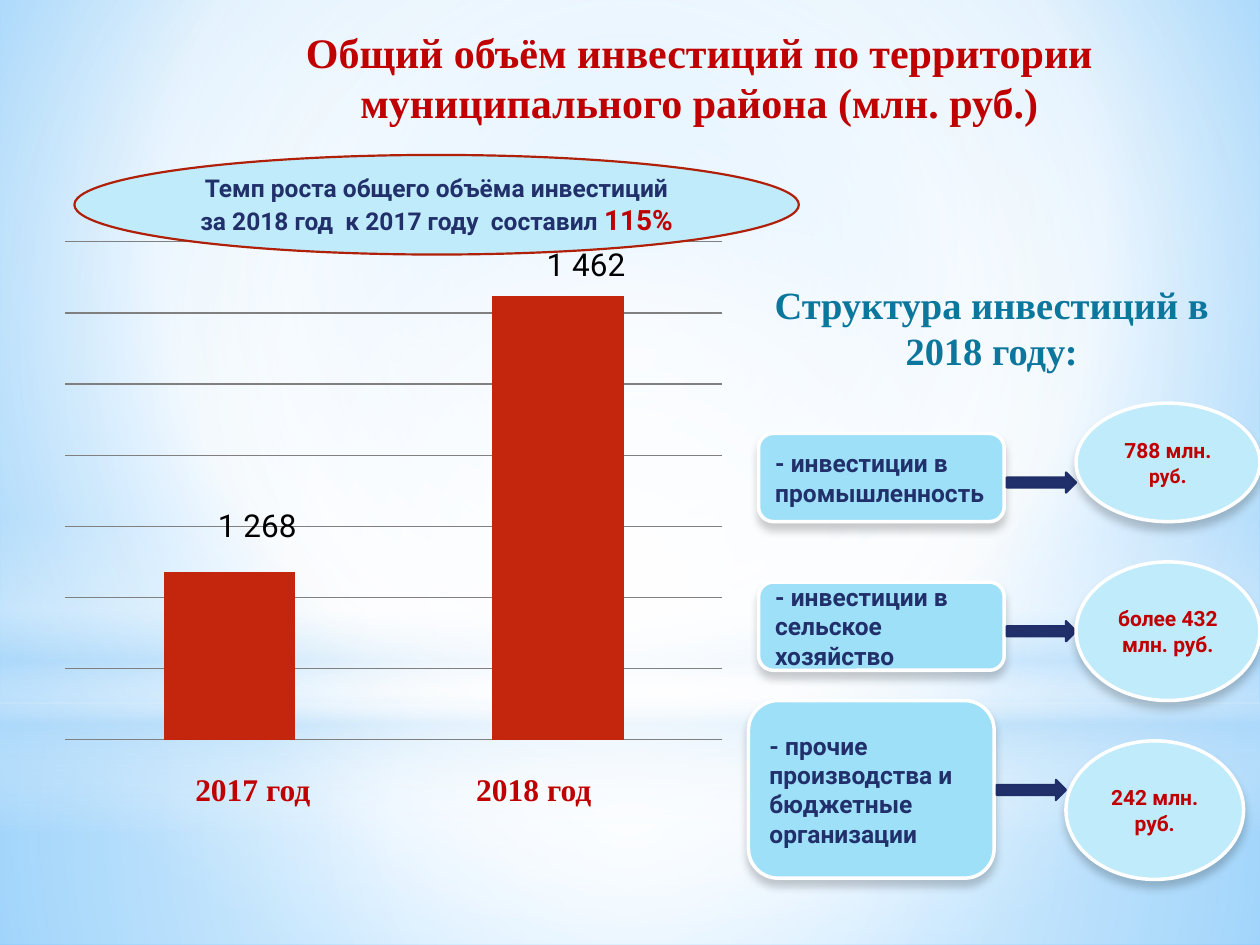
from dataclasses import dataclass
from typing import Any

from lxml import etree
from pptx import Presentation
from pptx import util as u
from pptx.chart import data as chart_data
from pptx.dml.color import RGBColor
from pptx.enum import chart as ch
from pptx.enum import shapes as sh
from pptx.enum import text as tx
from pptx.oxml import parse_xml
from pptx.oxml.ns import nsdecls, qn

RED = RGBColor(0xC0, 0x00, 0x00)
NAVY = RGBColor(0x21, 0x30, 0x6A)
ARROW_EDGE = RGBColor(0x1F, 0x2E, 0x69)
TEAL = RGBColor(0x0C, 0x77, 0x9D)
SKY = RGBColor(0x9E, 0xE0, 0xF8)
PALE = RGBColor(0xBF, 0xEB, 0xFA)
WHITE = RGBColor(0xFF, 0xFF, 0xFF)
MIST = RGBColor(0xB4, 0xDC, 0xFA)
BAR = RGBColor(0xC3, 0x26, 0x0C)
OVAL_EDGE = RGBColor(0xB0, 0x1F, 0x07)
BLACK = RGBColor(0, 0, 0)
GRID = RGBColor(0x80, 0x80, 0x80)
BG_INNER = RGBColor(0x9E, 0xD5, 0xFF)
BG_OUTER = RGBColor(0x5B, 0xB9, 0xFF)
SANS, SERIF = "Roboto", "Times New Roman"
KIND = sh.MSO_SHAPE
ALIGN = tx.PP_ALIGN

Frame = tuple[float, float, float, float]
Stop = tuple[int, RGBColor, int]


@dataclass(frozen=True)
class Run:
    text: str
    size: float
    color: RGBColor
    face: str = SANS


@dataclass(frozen=True)
class Backdrop:
    kind: Any
    frame: Frame
    stops: list[Stop]
    radial: bool = True


@dataclass(frozen=True)
class Sector:
    label: str
    box: Frame
    arrow: tuple[float, float]
    amount: list[Run]
    oval: Frame


CENTER = (50, 50, 50, 50)
BACKDROPS = [
    Backdrop(KIND.RECTANGLE, (0, 5.58, 10, 1.92), [(0, WHITE, 91), (37, WHITE, 76), (100, MIST, 79)]),
    Backdrop(KIND.RECTANGLE, (0, 0, 10, 5.58), [(0, WHITE, 89), (48, WHITE, 62), (100, MIST, 79)]),
    Backdrop(KIND.RECTANGLE, (0, 4.12, 10, 2.5),
             [(0, WHITE, 0), (29, WHITE, 30), (45, MIST, 40), (55, WHITE, 26),
              (65, MIST, 60), (100, WHITE, 0)], radial=False),
    Backdrop(KIND.OVAL, (0, 1.75, 10, 5.58), [(0, WHITE, 100), (56, WHITE, 0)]),
]
SECTORS = [
    Sector("- инвестиции в промышленность", (6.02, 3.44, 1.95, 0.7), (7.99, 3.75),
           [Run("788 млн. ", 12, RED), Run("руб", 11, RED), Run(".", 12, RED)],
           (8.54, 3.2, 1.46, 0.94)),
    Sector("- инвестиции в сельское хозяйство", (6.02, 4.62, 1.95, 0.7), (7.99, 4.93),
           [Run("более 432 млн. руб.", 12, RED)], (8.54, 4.46, 1.46, 1.1)),
    Sector("- прочие производства и бюджетные организации", (5.94, 5.56, 1.95, 1.41),
           (7.91, 6.19), [Run("242 млн. руб.", 12, RED)], (8.46, 5.88, 1.41, 1.1)),
]


def gradient(stops: list[Stop], focus: Frame | None):
    marks = "".join(
        f'<a:gs pos="{pos * 1000}"><a:srgbClr val="{color}">'
        f'<a:alpha val="{alpha * 1000}"/></a:srgbClr></a:gs>' for pos, color, alpha in stops)
    if focus:
        left, top, right, bottom = (edge * 1000 for edge in focus)
        course = (f'<a:path path="circle"><a:fillToRect l="{left}" t="{top}" '
                  f'r="{right}" b="{bottom}"/></a:path>')
    else:
        course = '<a:lin ang="5400000" scaled="0"/>'
    return parse_xml(f'<a:gradFill {nsdecls("a")} rotWithShape="1">'
                     f'<a:gsLst>{marks}</a:gsLst>{course}</a:gradFill>')


def place(frame: Frame) -> list[int]:
    return [u.Inches(length) for length in frame]


def write(frame, runs: list[Run], align=ALIGN.CENTER, anchor=tx.MSO_ANCHOR.MIDDLE) -> None:
    frame.word_wrap = True
    frame.vertical_anchor = anchor
    paragraph = frame.paragraphs[0]
    paragraph.alignment = align
    for part in runs:
        run = paragraph.add_run()
        run.text = part.text
        formats = {"name": part.face, "size": u.Pt(part.size), "bold": True}
        for key, value in formats.items():
            setattr(run.font, key, value)
        run.font.color.rgb = part.color


def add_backdrop(slide, backdrop: Backdrop) -> None:
    panel = slide.shapes.add_shape(backdrop.kind, *place(backdrop.frame))
    panel.shadow.inherit = False
    panel.line.fill.background()
    panel._element.spPr.find(qn("a:prstGeom")).addnext(
        gradient(backdrop.stops, CENTER if backdrop.radial else None))


def add_figure(slide, kind, frame: Frame, fill: RGBColor, edge: RGBColor, width: float,
               shadowed: bool = False):
    figure = slide.shapes.add_shape(kind, *place(frame))
    figure.shadow.inherit = False
    figure.fill.solid()
    figure.fill.fore_color.rgb = fill
    figure.line.color.rgb = edge
    figure.line.width = u.Pt(width)
    if shadowed:
        figure._element.spPr.find(qn("a:effectLst")).append(parse_xml(
            f'<a:outerShdw {nsdecls("a")} blurRad="{u.Pt(5)}" dist="{u.Pt(4)}" dir="5400000" '
            'rotWithShape="0"><a:srgbClr val="000000"><a:alpha val="20000"/></a:srgbClr>'
            '</a:outerShdw>'))
    return figure


def add_sector(slide, sector: Sector) -> None:
    box = add_figure(slide, KIND.ROUNDED_RECTANGLE, sector.box, SKY, WHITE, 2, True)
    write(box.text_frame, [Run(sector.label, 14, NAVY)], ALIGN.LEFT)
    add_figure(slide, KIND.RIGHT_ARROW, (*sector.arrow, 0.55, 0.16), NAVY, ARROW_EDGE, 1.25)
    oval = add_figure(slide, KIND.OVAL, sector.oval, PALE, WHITE, 2, True)
    write(oval.text_frame, sector.amount)


def layout_xml(x: float, y: float, size: tuple[float, float] | None = None):
    values = {"x": x, "y": y}
    if size:
        values = {"layoutTarget": "inner", "xMode": "edge", "yMode": "edge",
                  **values, "w": size[0], "h": size[1]}
    layout = etree.Element(qn("c:layout"))
    manual = etree.SubElement(layout, qn("c:manualLayout"))
    for tag, value in values.items():
        etree.SubElement(manual, qn(f"c:{tag}")).set("val", str(value))
    return layout


def hide_leader_lines(labels) -> None:
    for leader in labels.findall(qn("c:showLeaderLines")):
        leader.set("val", "0")
    labels.append(parse_xml(
        f'<c:extLst {nsdecls("c")}><c:ext uri="{{CE6537A1-D6FC-4f65-9D91-7224C49458BB}}" '
        'xmlns:c15="http://schemas.microsoft.com/office/drawing/2012/chart">'
        '<c15:showLeaderLines val="0"/></c:ext></c:extLst>'))


def add_totals(slide) -> None:
    totals = chart_data.CategoryChartData(number_format="#\\ ##0")
    totals.categories = ["1", "2"]
    totals.add_series("Series 1", (1268, 1462))
    chart = slide.shapes.add_chart(ch.XL_CHART_TYPE.COLUMN_STACKED,
                                   *place((0.35, 1.78, 5.55, 4.65)), totals).chart
    chart.has_legend = chart.has_title = False
    chart.font.name, chart.font.size = SANS, u.Pt(18)
    chart.font.color.rgb = BLACK
    area = chart._chartSpace.chart.plotArea
    for old in area.findall(qn("c:layout")):
        area.remove(old)
    area.insert(0, layout_xml(0.03, 0.03, (0.94, 0.85)))
    chart.category_axis.visible = chart.value_axis.visible = False
    scale = {"minimum_scale": 1150, "maximum_scale": 1500, "major_unit": 50,
             "has_major_gridlines": True}
    for key, value in scale.items():
        setattr(chart.value_axis, key, value)
    chart.value_axis.major_gridlines.format.line.color.rgb = GRID
    plot = chart.plots[0]
    plot.gap_width, plot.overlap, plot.vary_by_categories = 150, 100, False
    bars = plot.series[0]
    bars.format.fill.solid()
    bars.format.fill.fore_color.rgb = BAR
    bars.data_labels.show_value = True
    for index, (x, y) in enumerate([(0.04, -0.22), (0.04, -0.43)]):
        label = bars.points[index].data_label._get_or_add_dLbl()
        label.find(qn("c:idx")).addnext(layout_xml(x, y))
    hide_leader_lines(bars.data_labels._element)


def main() -> None:
    deck = Presentation()
    deck.slide_width, deck.slide_height = u.Inches(10), u.Inches(7.5)
    slide = deck.slides.add_slide(deck.slide_layouts[5])
    slide.background.fill.solid()
    solid = slide._element.cSld.bg.bgPr.find(qn("a:solidFill"))
    solid.getparent().replace(solid, gradient(
        [(0, BG_INNER, 100), (60, WHITE, 100), (100, BG_OUTER, 100)], (20, 10, 20, 60)))
    for backdrop in BACKDROPS:
        add_backdrop(slide, backdrop)
    for sector in SECTORS:
        add_sector(slide, sector)

    title = slide.shapes.title
    title.left, title.top, title.width, title.height = place((1.93, 0.16, 7.24, 0.91))
    write(title.text_frame, [Run("Общий объём инвестиций по территории муниципального района "
                                 "(млн. руб.)", 24, RED, SERIF)], anchor=tx.MSO_ANCHOR.TOP)
    slide.shapes._spTree.append(title._element)

    add_totals(slide)
    growth = add_figure(slide, KIND.OVAL, (0.59, 1.23, 5.75, 0.79), PALE, OVAL_EDGE, 1.25)
    write(growth.text_frame, [Run("Темп роста общего объёма инвестиций за 2018 год  к 2017 году"
                                  "  составил ", 14, NAVY), Run("115%", 16, RED)])
    heading = slide.shapes.add_textbox(*place((6.02, 2.18, 3.7, 0.87))).text_frame
    write(heading, [Run("Структура инвестиций в 2018 году:", 22, TEAL, SERIF)],
          anchor=tx.MSO_ANCHOR.TOP)
    years = slide.shapes.add_textbox(*place((1.3, 6.06, 3.7, 0.47))).text_frame
    years.margin_left = u.Inches(0.25)
    tabs = etree.SubElement(years.paragraphs[0]._p.get_or_add_pPr(), qn("a:tabLst"))
    etree.SubElement(tabs, qn("a:tab"), pos=str(u.Inches(2.23)), algn="l")
    write(years, [Run("2017 год\t2018 год", 18, RED, SERIF)], ALIGN.LEFT, tx.MSO_ANCHOR.TOP)
    deck.save("out.pptx")


if __name__ == "__main__":
    main()
